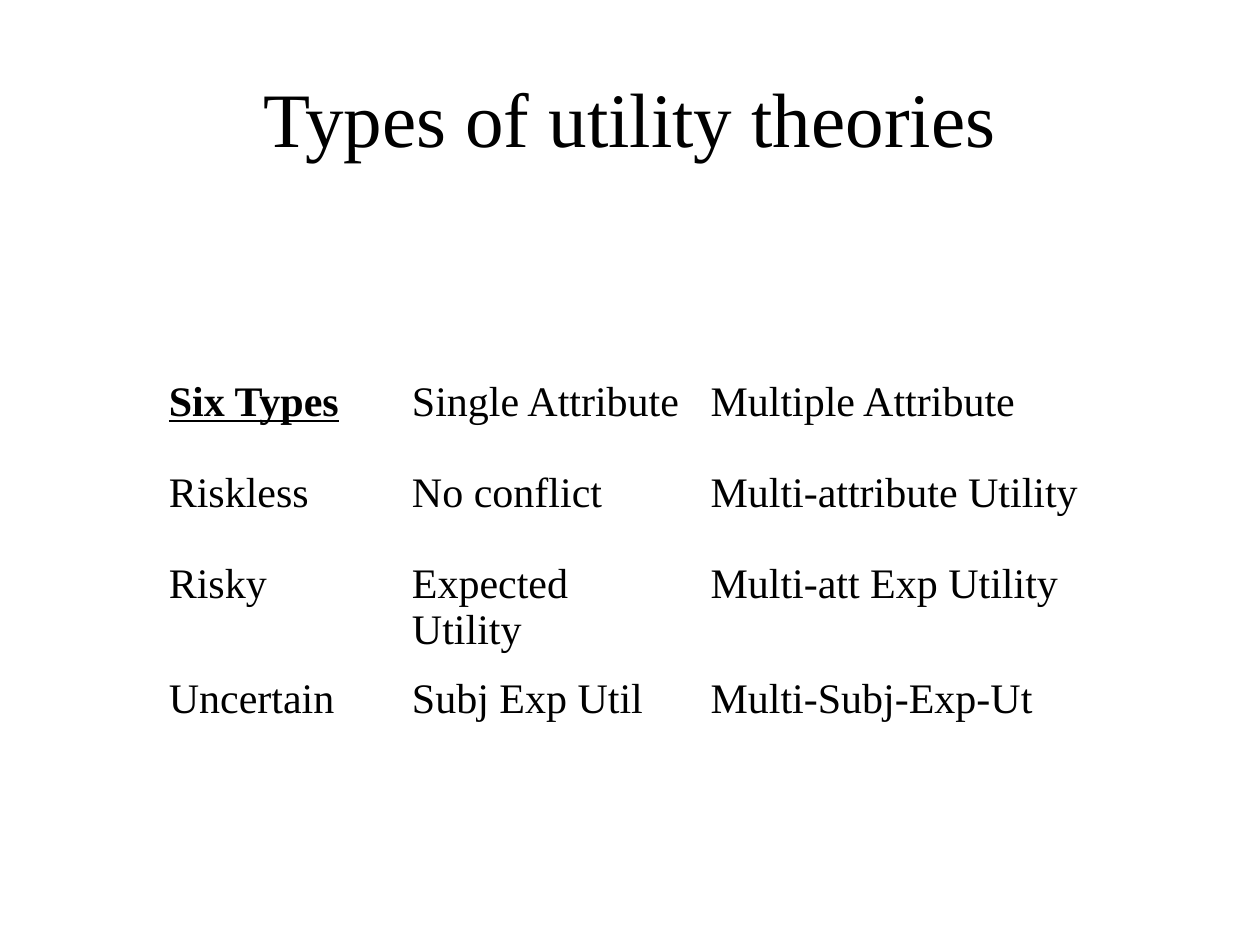
"""Build the slide on types of utility theories."""
import pptx
import pptx.dml.color
import pptx.enum.text
import pptx.util

Inches = pptx.util.Inches


def color(value):
    return pptx.dml.color.RGBColor.from_string(value)


def write(p, text, size, **extra):
    r = p.add_run()
    r.text = text
    r.font.color.rgb = color("000000")
    fmt = {"name": "Times New Roman", "size": pptx.util.Pt(size), **extra}
    for key, value in fmt.items():
        setattr(r.font, key, value)


prs = pptx.Presentation()
prs.slide_width, prs.slide_height = Inches(10), Inches(7.5)
s = prs.slides.add_slide(prs.slide_layouts[5])

sp = s.shapes.title
box = {"left": 0.5, "top": 0.3, "width": 9, "height": 1.25}
for key, value in box.items():
    setattr(sp, key, Inches(value))
tf = sp.text_frame
tf.vertical_anchor = pptx.enum.text.MSO_ANCHOR.MIDDLE
p = tf.paragraphs[0]
p.alignment = pptx.enum.text.PP_ALIGN.CENTER
write(p, "Types of utility theories", 44)

rows = [
    ["Six Types", "Single Attribute", "Multiple Attribute"],
    ["Riskless", "No conflict", "Multi-attribute Utility"],
    ["Risky", "Expected Utility", "Multi-att Exp Utility"],
    ["Uncertain", "Subj Exp Util", "Multi-Subj-Exp-Ut"],
]
widths = [1.93, 2.37, 3.12]
row_height = 0.72
tbl = s.shapes.add_table(
    len(rows), len(widths), Inches(1.25), Inches(2.92),
    Inches(sum(widths)), Inches(row_height * len(rows)),
).table
tbl.first_row = tbl.horz_banding = False
for col, width in zip(tbl.columns, widths):
    col.width = Inches(width)

margins = ["margin_left", "margin_top", "margin_right", "margin_bottom"]
for i, row in enumerate(rows):
    tbl.rows[i].height = Inches(row_height)
    for j, text in enumerate(row):
        cell = tbl.cell(i, j)
        cell.fill.background()
        for margin in margins:
            setattr(cell, margin, Inches(0.09))
        corner = i == j == 0
        write(cell.text_frame.paragraphs[0], text, 24, bold=corner, underline=corner)

prs.save("out.pptx")
